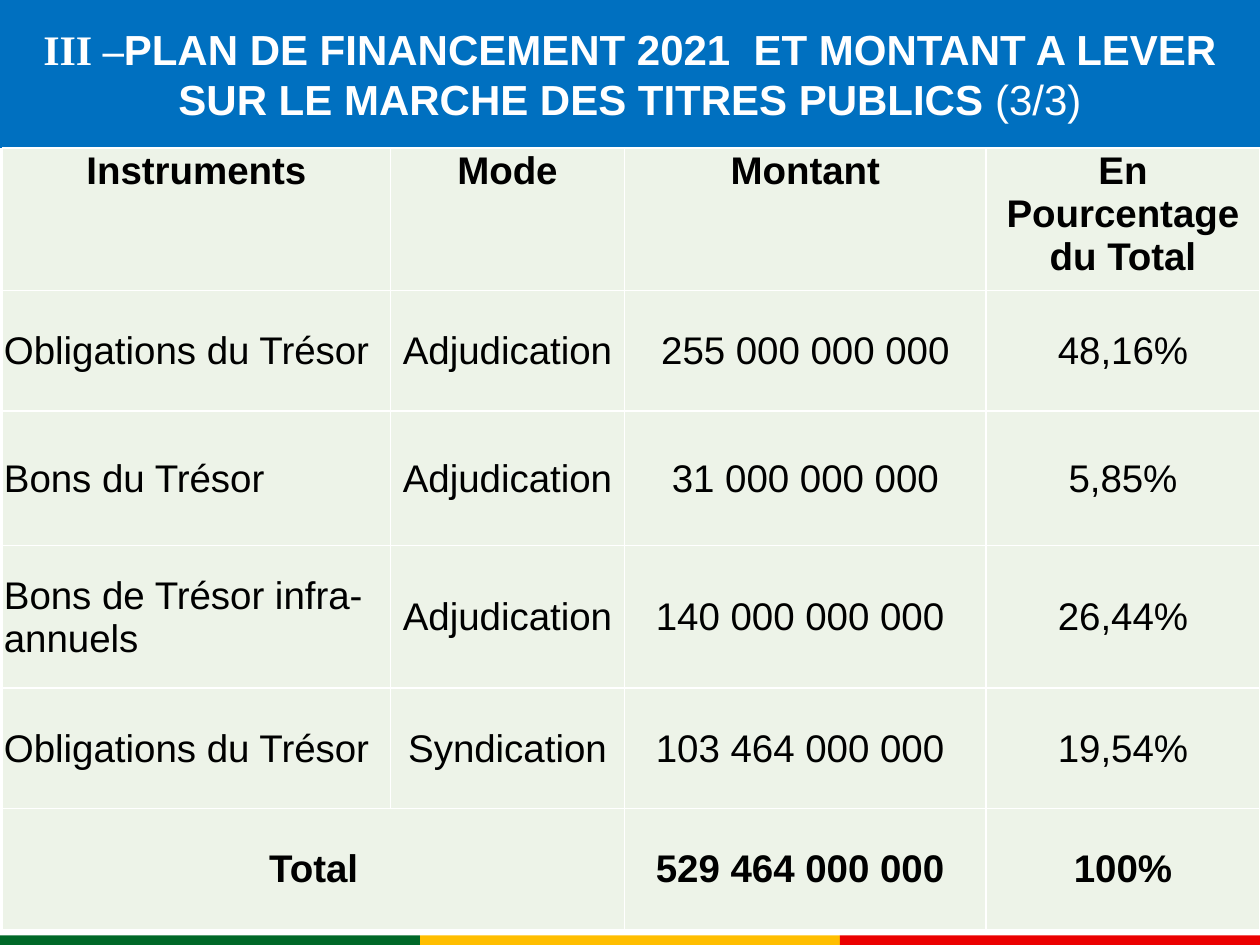
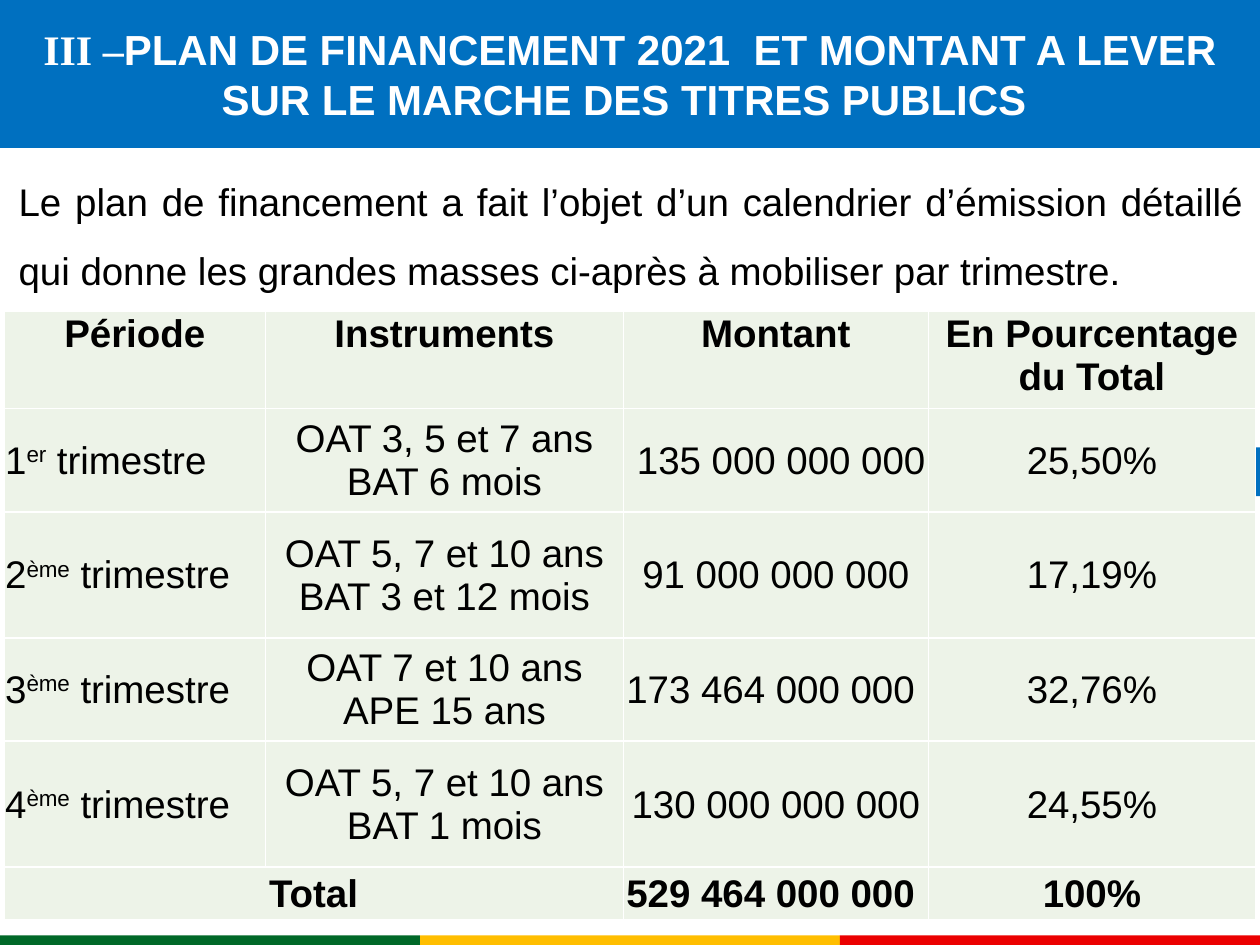
from lxml.etree import SubElement
from pptx import Presentation
from pptx.dml.color import RGBColor
from pptx.enum.shapes import MSO_SHAPE
from pptx.enum.text import MSO_ANCHOR, PP_ALIGN
from pptx.oxml.ns import qn
from pptx.util import Pt

RECT = MSO_SHAPE.RECTANGLE
TOP, MIDDLE = MSO_ANCHOR.TOP, MSO_ANCHOR.MIDDLE
LEFT, CENTER, JUSTIFY = PP_ALIGN.LEFT, PP_ALIGN.CENTER, PP_ALIGN.JUSTIFY

BLUE = RGBColor(0x00, 0x70, 0xC0)
GREEN = RGBColor(0x00, 0x68, 0x28)
YELLOW = RGBColor(0xFF, 0xBE, 0x00)
RED = RGBColor(0xEB, 0x00, 0x00)
PALE = RGBColor(0xED, 0xF3, 0xE8)
WHITE = RGBColor(0xFF, 0xFF, 0xFF)
BLACK = RGBColor(0x00, 0x00, 0x00)

WIDE, HIGH = 720, 540
BAND = 84.5
HEAD = {"name": "Arial", "size": Pt(24), "bold": True}
BODY = {"name": "Arial", "size": Pt(22), "bold": False}
PAD = {"margin_left": Pt(0.75), "margin_right": Pt(0.75),
       "margin_top": Pt(0.75), "margin_bottom": Pt(0)}

TITLE = [
    ("III –", {"name": "Times New Roman"}),
    ("PLAN DE FINANCEMENT 2021  ET MONTANT A LEVER "
     "SUR LE MARCHE DES TITRES PUBLICS", {}),
]
INTRO = ("Le plan de financement a fait l’objet d’un calendrier d’émission "
         "détaillé qui donne les grandes masses ci-après à mobiliser par "
         "trimestre.")
TOTAL = ["Total", "", "529 464 000 000 ", "100%"]
MODES = [
    ["Instruments", "Mode", "Montant", "En Pourcentage du Total"],
    ["Obligations du Trésor", "Adjudication", " 255 000 000 000 ", "48,16%"],
    ["Bons du Trésor", "Adjudication", "31 000 000 000", "5,85%"],
    ["Bons de Trésor infra-annuels", "Adjudication", "140 000 000 000 ",
     "26,44%"],
    ["Obligations du Trésor", "Syndication", "103 464 000 000 ", "19,54%"],
    TOTAL,
]
TERMS = [
    ["Période", "Instruments", "Montant", "En Pourcentage du Total"],
    ["1^er^ trimestre", "OAT 3, 5 et 7 ans\nBAT 6 mois",
     " 135 000 000 000 ", "25,50%"],
    ["2^ème^ trimestre", "OAT 5, 7 et 10 ans\nBAT 3 et 12 mois",
     "91 000 000 000", "17,19%"],
    ["3^ème^ trimestre", "OAT 7 et 10 ans\nAPE 15 ans",
     "173 464 000 000 ", "32,76%"],
    ["4^ème^ trimestre", "OAT 5, 7 et 10 ans\nBAT 1 mois",
     "130 000 000 000", "24,55%"],
    TOTAL,
]


def apply(item, style):
    for key, value in style.items():
        setattr(item, key, value)


def add_run(para, text, style, color):
    run = para.add_run()
    run.text = text
    apply(run.font, style)
    run.font.color.rgb = color
    return run


def add_rect(slide, x, y, w, h, color):
    box = slide.shapes.add_shape(RECT, Pt(x), Pt(y), Pt(w), Pt(h))
    box.shadow.inherit = False
    box.fill.solid()
    box.fill.fore_color.rgb = color
    box.line.fill.background()


def add_text(slide, x, y, w, h, runs, base, color, anchor, **form):
    box = slide.shapes.add_textbox(Pt(x), Pt(y), Pt(w), Pt(h))
    frame = box.text_frame
    apply(frame, {"word_wrap": True, "vertical_anchor": anchor})
    para = frame.paragraphs[0]
    apply(para, form)
    for text, style in runs:
        add_run(para, text, {**base, **style}, color)


def add_frame(slide, extra):
    third = WIDE / 3
    for n, color in enumerate((GREEN, YELLOW, RED)):
        add_rect(slide, n * third, 534.5, third, HIGH - 534.5, color)
    add_rect(slide, 0, 0, WIDE, BAND, BLUE)
    add_text(slide, 0, 0, WIDE, BAND, TITLE + [extra], HEAD, WHITE, MIDDLE,
             alignment=CENTER)


def add_edges(cell):
    props = cell._tc.get_or_add_tcPr()
    for side in ("a:lnL", "a:lnR", "a:lnT", "a:lnB"):
        line = SubElement(props, qn(side), w=str(Pt(1)))
        fill = SubElement(line, qn("a:solidFill"))
        SubElement(fill, qn("a:srgbClr"), val=str(WHITE))


def fill_cell(cell, text, align, bold):
    frame = cell.text_frame
    for n, line in enumerate(text.split("\n")):
        para = frame.add_paragraph() if n else frame.paragraphs[0]
        para.alignment = align
        for k, part in enumerate(line.split("^")):
            run = add_run(para, part, {**BODY, "bold": bold}, BLACK)
            if k % 2:
                run.font._element.set("baseline", "30000")


def add_grid(slide, x, y, cols, rows, data):
    shape = slide.shapes.add_table(len(rows), len(cols), Pt(x), Pt(y),
                                   Pt(sum(cols)), Pt(sum(rows)))
    table = shape.table
    apply(table, {"first_row": False, "horz_banding": False})
    for col, width in zip(table.columns, cols):
        col.width = Pt(width)
    for row, height in zip(table.rows, rows):
        row.height = Pt(height)
    last = len(rows) - 1
    table.cell(last, 0).merge(table.cell(last, 1))
    for r, texts in enumerate(data):
        for c, text in enumerate(texts):
            cell = table.cell(r, c)
            add_edges(cell)
            cell.fill.solid()
            cell.fill.fore_color.rgb = PALE
            apply(cell, PAD)
            cell.vertical_anchor = MIDDLE if r else TOP
            edge = r in (0, last)
            if text:
                fill_cell(cell, text, CENTER if c or edge else LEFT, edge)


def main():
    deck = Presentation()
    deck.slide_width, deck.slide_height = Pt(WIDE), Pt(HIGH)
    blank = deck.slide_layouts[6]

    slide = deck.slides.add_slide(blank)
    add_frame(slide, (" (3/3)", {"bold": False}))
    add_grid(slide, 1.5, BAND, [221.5, 134, 206.5, 156.5],
             [81.4, 69, 76.8, 81.4, 69, 69], MODES)

    slide = deck.slides.add_slide(blank)
    add_frame(slide, (" ", {}))
    add_rect(slide, 692, 255.6, 28, 28, BLUE)
    add_text(slide, 3.6, 85, 714, 92, [(INTRO, {})], BODY, BLACK, TOP,
             alignment=JUSTIFY, line_spacing=1.5, space_after=Pt(10))
    add_grid(slide, 2.2, 178, [149.6, 204.4, 174.4, 186.8],
             [55.5, 59, 72, 59, 72, 30], TERMS)

    deck.save("out.pptx")


if __name__ == "__main__":
    main()
